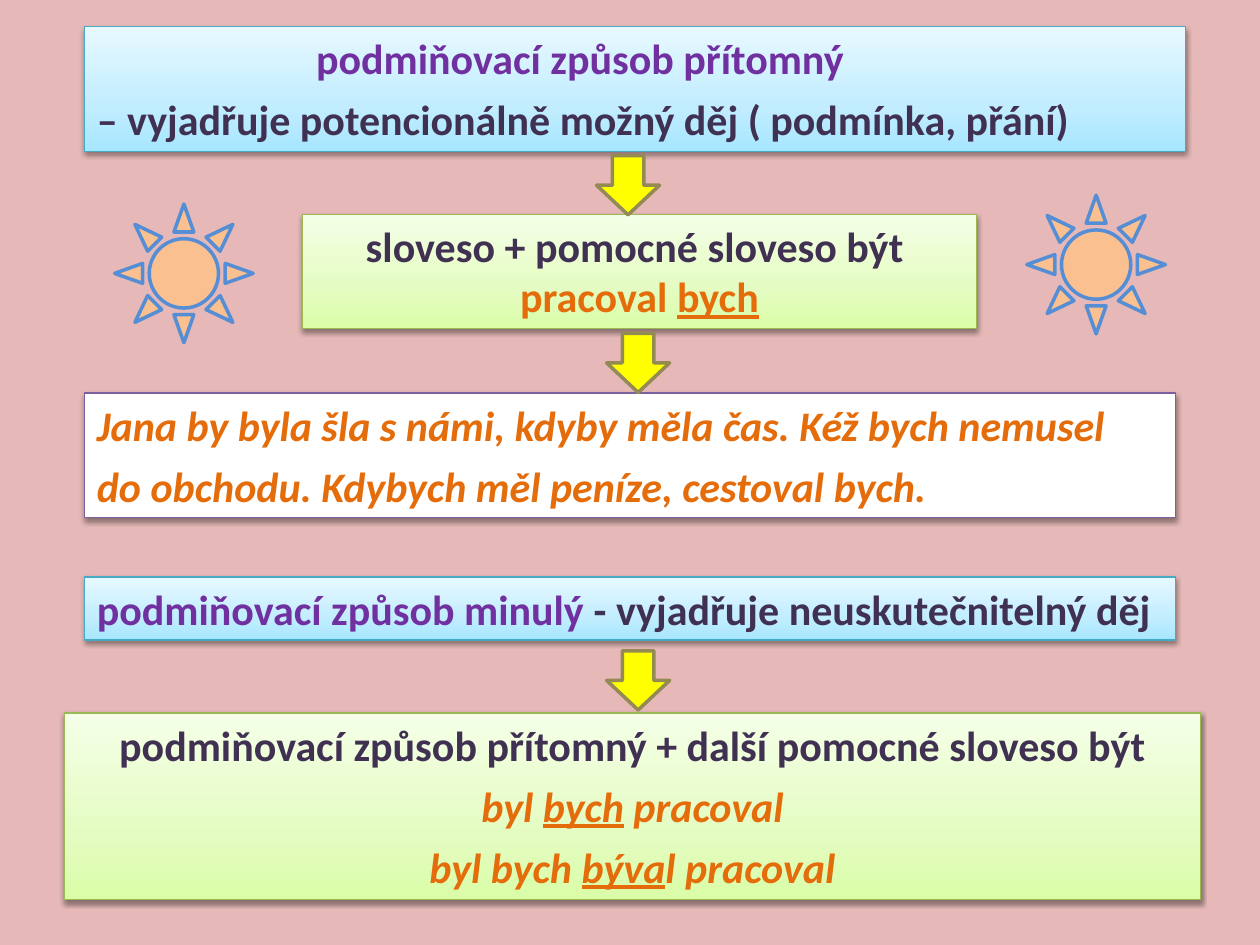
from lxml.etree import SubElement
from pptx import Presentation
from pptx.dml.color import RGBColor
from pptx.enum.shapes import MSO_SHAPE as Shape
from pptx.enum.text import MSO_ANCHOR as Anchor, MSO_AUTO_SIZE as AutoSize, PP_ALIGN as Align
from pptx.oxml.ns import qn
from pptx.util import Inches, Pt

PINK = RGBColor(0xE6, 0xB9, 0xB8)
WHITE = RGBColor(0xFF, 0xFF, 0xFF)
YELLOW = RGBColor(0xFF, 0xFF, 0x00)
OLIVE = RGBColor(0x94, 0x8A, 0x54)
PEACH = RGBColor(0xFA, 0xC0, 0x90)
BLUE = RGBColor(0x55, 0x8E, 0xD5)
PURPLE = RGBColor(0x70, 0x30, 0xA0)
INK = RGBColor(0x40, 0x31, 0x52)
ORANGE = RGBColor(0xE4, 0x6C, 0x0A)
AQUA_LINE = RGBColor(0x46, 0xAA, 0xC5)
GREEN_LINE = RGBColor(0x98, 0xB9, 0x55)
VIOLET_LINE = RGBColor(0x7D, 0x60, 0xA0)
AQUA = (RGBColor(0xA7, 0xE6, 0xFF), RGBColor(0xC1, 0xED, 0xFF), RGBColor(0xE7, 0xF8, 0xFF))
GREEN = (RGBColor(0xDA, 0xFD, 0xA7), RGBColor(0xE4, 0xFC, 0xC2), RGBColor(0xF5, 0xFF, 0xE7))
STOPS = (0, 35, 100)


class GrammarSlide:
    """Draws the slide on a grid of 100 columns by 75 rows."""

    cell = Inches(0.1)
    font = "Calibri"
    size = Pt(24)

    def __init__(self, presentation):
        presentation.slide_width = 100 * self.cell
        presentation.slide_height = 75 * self.cell
        self.slide = presentation.slides.add_slide(presentation.slide_layouts[6])
        self.slide.background.fill.solid()
        self.slide.background.fill.fore_color.rgb = PINK

    def figure(self, kind, column, row, columns, rows, fill, line, weight=2):
        bounds = [round(value * self.cell) for value in (column, row, columns, rows)]
        shape = self.slide.shapes.add_shape(kind, *bounds)
        shape.shadow.inherit = False
        if isinstance(fill, RGBColor):
            shape.fill.solid()
            shape.fill.fore_color.rgb = fill
        else:
            self.gradient(shape, fill)
        shape.line.color.rgb = line
        shape.line.width = Pt(weight)
        return shape

    def gradient(self, shape, colors):
        shape.fill.gradient()
        shape.fill.gradient_angle = 90
        stops = shape._element.spPr.find(".//" + qn("a:gsLst"))
        for stop in list(stops):
            stops.remove(stop)
        for position, color in zip(STOPS, colors):
            stop = SubElement(stops, qn("a:gs"), pos=str(position * 1000))
            SubElement(stop, qn("a:srgbClr"), val=str(color))

    def cast_shadow(self, shape):
        effects = shape._element.spPr.find(qn("a:effectLst"))
        shadow = SubElement(effects, qn("a:outerShdw"), blurRad=str(Pt(3.1)), dist=str(Pt(1.6)),
                            dir="5400000", rotWithShape="0")
        color = SubElement(shadow, qn("a:srgbClr"), val="000000")
        SubElement(color, qn("a:alpha"), val="38000")

    def arrow(self, column, row):
        shape = self.figure(Shape.LEFT_ARROW, column, row, 4.7, 5, YELLOW, OLIVE)
        shape.rotation = 270

    def sun(self, column, row):
        self.figure(Shape.SUN, column, row, 11, 11, PEACH, BLUE)

    def box(self, bounds, fill, line, paragraphs, align=Align.LEFT, before=6, indents=()):
        shape = self.figure(Shape.RECTANGLE, *bounds, fill, line, 0.75)
        self.cast_shadow(shape)
        frame = shape.text_frame
        frame.word_wrap = True
        frame.auto_size = AutoSize.SHAPE_TO_FIT_TEXT
        frame.vertical_anchor = Anchor.TOP
        for index, runs in enumerate(paragraphs):
            paragraph = frame.paragraphs[0] if index == 0 else frame.add_paragraph()
            paragraph.alignment = align
            paragraph.space_before = Pt(before)
            if index < len(indents):
                paragraph._p.get_or_add_pPr().set("marL", str(round(indents[index] * self.cell)))
            for text, color, *marks in runs:
                self.run(paragraph, text, color, marks)

    def run(self, paragraph, text, color, marks):
        run = paragraph.add_run()
        run.text = text
        run.font.name = self.font
        run.font.size = self.size
        run.font.bold = True
        run.font.italic = "italic" in marks
        run.font.underline = "underline" in marks
        run.font.color.rgb = color


def main():
    presentation = Presentation()
    page = GrammarSlide(presentation)
    page.box((6.7, 2.1, 87.4, 9.9), AQUA, AQUA_LINE, [
        [("podmiňovací způsob přítomný", PURPLE)],
        [("– vyjadřuje potencionálně možný děj ( podmínka, přání)", INK)],
    ], indents=(17.4,))
    page.box((24, 17, 53.5, 9.1), GREEN, GREEN_LINE, [
        [("sloveso + pomocné sloveso být ", INK)],
        [("pracoval ", ORANGE), ("bych", ORANGE, "underline")],
    ], Align.CENTER, before=0)
    page.box((6.7, 31.2, 86.6, 9.9), WHITE, VIOLET_LINE, [
        [("Jana by byla šla s námi, kdyby měla čas. Kéž bych nemusel", ORANGE, "italic")],
        [("do obchodu. Kdybych měl peníze, cestoval bych.", ORANGE, "italic")],
    ])
    page.box((6.7, 45.8, 86.6, 5), AQUA, AQUA_LINE, [
        [("podmiňovací způsob minulý ", PURPLE), ("- vyjadřuje neuskutečnitelný děj", INK)],
    ])
    page.box((5.1, 56.6, 90.2, 14.8), GREEN, GREEN_LINE, [
        [("podmiňovací způsob přítomný + další pomocné sloveso být", INK)],
        [("byl ", ORANGE, "italic"), ("bych", ORANGE, "italic", "underline"),
         (" pracoval", ORANGE, "italic")],
        [("byl bych ", ORANGE, "italic"), ("býva", ORANGE, "italic", "underline"),
         ("l pracoval", ORANGE, "italic")],
    ], Align.CENTER)
    for column, row in ((47.5, 12.2), (48.3, 26.3), (48.3, 51.5)):
        page.arrow(column, row)
    for column, row in ((81.5, 15.5), (9.1, 16.2)):
        page.sun(column, row)
    presentation.save("out.pptx")


if __name__ == "__main__":
    main()
